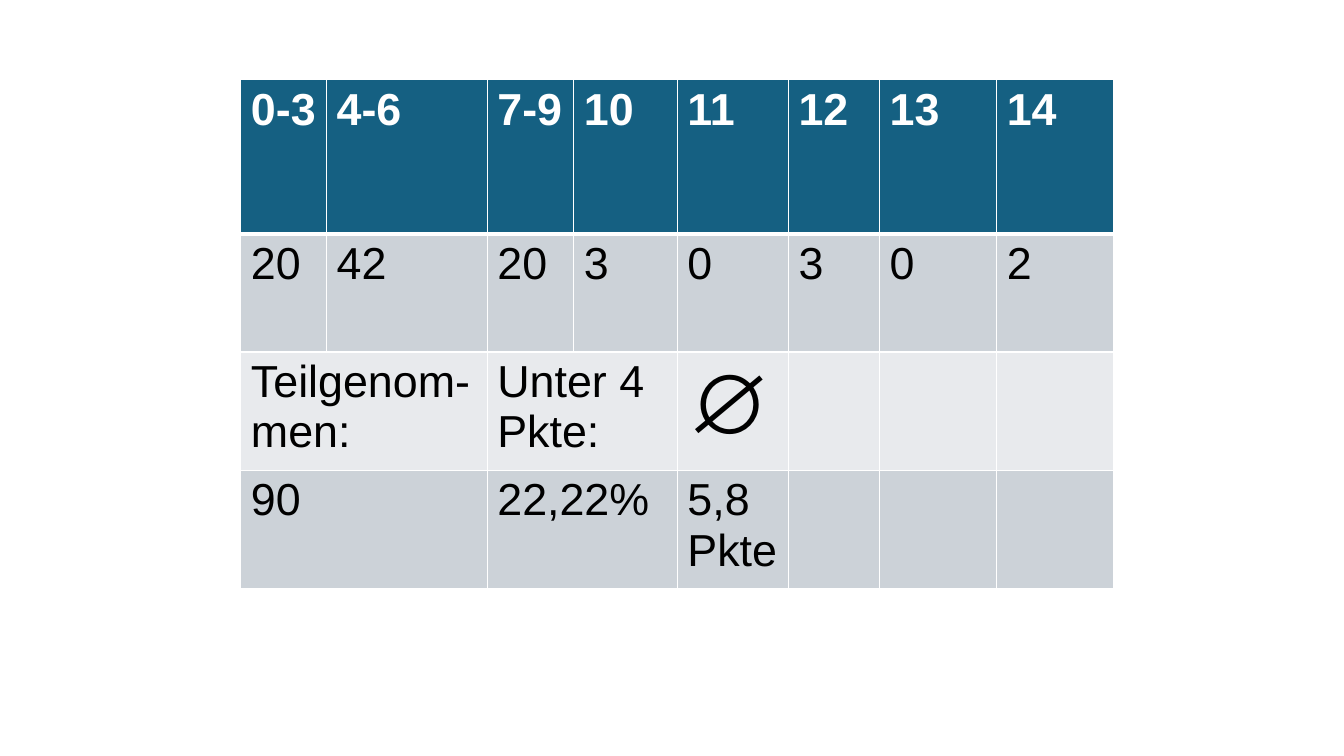
from lxml import etree
from pptx import Presentation, util as u
from pptx.dml.color import RGBColor
from pptx.oxml.ns import qn

ROWS = [
    ["0-3", "4-6", "7-9", "10", "11", "12", "13", "14"],
    ["20", "42", "20", "3", "0", "3", "0", "2"],
    ["Teilgenom-men:", "", "Unter 4 Pkte:", "", "∅", "", "", ""],
    ["90", "", "22,22%", "", "5,8\nPkte", "", "", ""],
]
SPANS = [(2, 0), (2, 2), (3, 0), (3, 2)]
WIDTHS = [2.16, 4.05, 2.18, 2.61, 2.8, 2.3, 2.95, 2.95]
HEIGHTS = [3.88, 2.98, 2.98, 2.98]
LEFT, TOP = 6.07, 2.01
THEME = {
    "font": "Arial", "size": 32, "sign": 60,
    "head": "156082", "bands": ["E8EAED", "CCD2D8"],
    "light": "FFFFFF", "dark": "000000",
    "thin": 1, "thick": 3,
}


def edge(cell, side, width):
    line = etree.SubElement(cell._tc.get_or_add_tcPr(), qn("a:ln" + side),
                            w=str(u.Pt(width)))
    fill = etree.SubElement(line, qn("a:solidFill"))
    etree.SubElement(fill, qn("a:srgbClr"), val=THEME["light"])


def write(cell, words, head):
    para = cell.text_frame.paragraphs[0]
    sign = words == "∅"
    size = THEME["sign" if sign else "size"]
    for i, part in enumerate(words.split("\n")):
        if i:
            para.add_line_break()
        run = para.add_run()
        run.text = part
        font = run.font
        font.name = THEME["font"]
        font.size = u.Pt(size)
        font.bold = head or sign
        font.color.rgb = RGBColor.from_string(THEME["light" if head else "dark"])


def style(cell, row):
    for side in "LRTB":
        thick = (row, side) in [(0, "B"), (1, "T")]
        edge(cell, side, THEME["thick" if thick else "thin"])
    tint = THEME["bands"][row % 2] if row else THEME["head"]
    cell.fill.solid()
    cell.fill.fore_color.rgb = RGBColor.from_string(tint)


def main():
    deck = Presentation()
    deck.slide_width, deck.slide_height = u.Cm(33.87), u.Cm(19.05)
    slide = deck.slides.add_slide(deck.slide_layouts[6])
    grid = slide.shapes.add_table(
        len(ROWS), len(WIDTHS), u.Cm(LEFT), u.Cm(TOP),
        u.Cm(sum(WIDTHS)), u.Cm(sum(HEIGHTS))).table
    for col, width in zip(grid.columns, WIDTHS):
        col.width = u.Cm(width)
    for row, height in zip(grid.rows, HEIGHTS):
        row.height = u.Cm(height)
    for r, c in SPANS:
        grid.cell(r, c).merge(grid.cell(r, c + 1))
    for r, row in enumerate(ROWS):
        for c, words in enumerate(row):
            cell = grid.cell(r, c)
            style(cell, r)
            if words:
                write(cell, words, r == 0)
    deck.save("out.pptx")


if __name__ == "__main__":
    main()
